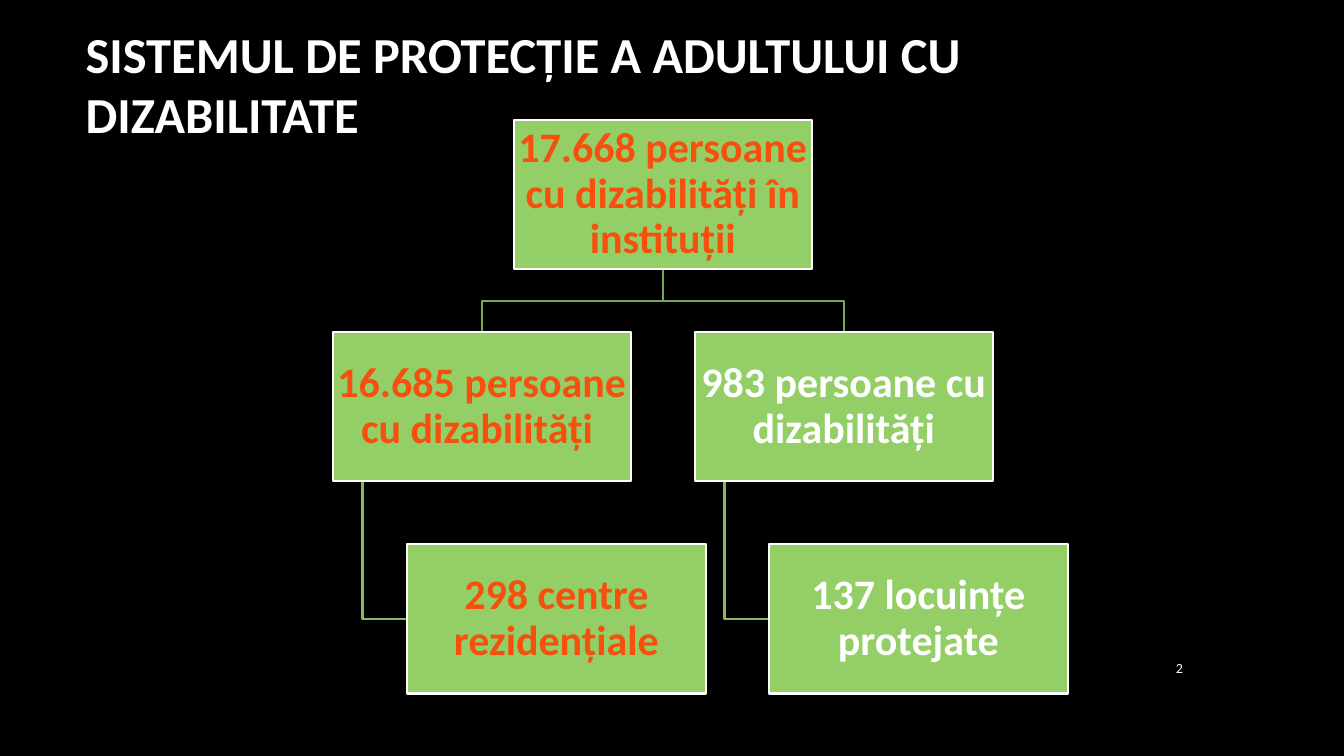
from dataclasses import dataclass
from pptx import Presentation
from pptx import util as u
from pptx.dml.color import RGBColor
from pptx.enum import shapes, text

IN = u.Inches


@dataclass(frozen=True)
class Theme:
    """Colours, type sizes and font of the slide."""
    back: str = "000000"
    white: str = "FFFFFF"
    accent: str = "F64F0E"
    box: str = "94CE67"
    upper: str = "77A552"
    lower: str = "86BB5D"
    font: str = "Calibri"
    head: int = 36
    body: int = 30
    small: int = 10
    line: float = 1.5


T = Theme()


def rgb(code):
    """Turn a hex code into a colour."""
    return RGBColor.from_string(code)


def write(frame, words, size, color, align, bold=True):
    """Put one styled paragraph in a text frame and return it."""
    frame.word_wrap = True
    frame.vertical_anchor = text.MSO_ANCHOR.MIDDLE
    para = frame.paragraphs[0]
    para.text = words
    para.alignment = align
    font = para.font
    font.name, font.size, font.bold = T.font, u.Pt(size), bold
    font.color.rgb = rgb(color)
    return para


def add_title(slide, left, top, width, height):
    """Place and format the title."""
    title = slide.shapes.title
    title.left, title.top = IN(left), IN(top)
    title.width, title.height = IN(width), IN(height)
    write(title.text_frame, "SISTEMUL DE PROTECȚIE A ADULTULUI CU DIZABILITATE",
          T.head, T.white, text.PP_ALIGN.LEFT)


def add_number(slide, left, top, width, height):
    """Place the page number."""
    box = slide.shapes.add_textbox(IN(left), IN(top), IN(width), IN(height))
    write(box.text_frame, "2", T.small, T.white, text.PP_ALIGN.RIGHT, False)


def add_path(slide, points, color):
    """Draw an open bent line through the points."""
    start, *rest = [(IN(x), IN(y)) for x, y in points]
    pen = slide.shapes.build_freeform(*start)
    pen.add_line_segments(rest, close=False)
    path = pen.convert_to_shape()
    path.shadow.inherit = False
    path.fill.background()
    path.line.color.rgb = rgb(color)
    path.line.width = u.Pt(T.line)


def add_node(slide, left, top, width, height, words, color):
    """Draw one box of the chart."""
    node = slide.shapes.add_shape(shapes.MSO_SHAPE.RECTANGLE, IN(left), IN(top),
                                  IN(width), IN(height))
    node.shadow.inherit = False
    node.fill.solid()
    node.fill.fore_color.rgb = rgb(T.box)
    node.line.color.rgb = rgb(T.white)
    node.line.width = u.Pt(T.line)
    frame = node.text_frame
    frame.margin_left = frame.margin_right = IN(0.02)
    frame.margin_top = frame.margin_bottom = IN(0.02)
    para = write(frame, words, T.body, color, text.PP_ALIGN.CENTER)
    para.line_spacing = 0.9


def add_tree(slide, left, top, width, height):
    """Draw the root, its two branches and a leaf under each."""
    wide, tall, shift = 2.96, 1.48, 0.74
    step = width - shift - wide
    drop = (height - tall) / 2
    mid, low = top + drop, top + 2 * drop
    root = left + step / 2
    stem = root + wide / 2
    bend = (top + tall + mid) / 2
    branches = [
        ("16.685 persoane cu dizabilități ", "298 centre rezidențiale", T.accent),
        ("983 persoane cu dizabilități", "137 locuințe protejate", T.white),
    ]
    for i, (words, leaf, color) in enumerate(branches):
        x = left + i * step
        side, center = x + wide / 10, x + wide / 2
        half = low + tall / 2
        add_path(slide, [(stem, top + tall), (stem, bend), (center, bend),
                         (center, mid)], T.upper)
        add_path(slide, [(side, mid + tall), (side, half), (x + shift, half)],
                 T.lower)
        add_node(slide, x, mid, wide, tall, words, color)
        add_node(slide, x + shift, low, wide, tall, leaf, color)
    add_node(slide, root, top, wide, tall,
             "17.668 persoane cu dizabilități în instituții", T.accent)


def main():
    """Build and save the slide."""
    deck = Presentation()
    deck.slide_width, deck.slide_height = IN(13.33), IN(7.5)
    slide = deck.slides.add_slide(deck.slide_layouts[5])
    slide.background.fill.solid()
    slide.background.fill.fore_color.rgb = rgb(T.back)
    add_title(slide, 0.75, 0.03, 11.08, 1.59)
    add_number(slide, 11.23, 6.42, 0.6, 0.41)
    add_tree(slide, 3.3, 1.19, 7.29, 5.69)
    deck.save("out.pptx")


if __name__ == "__main__":
    main()
